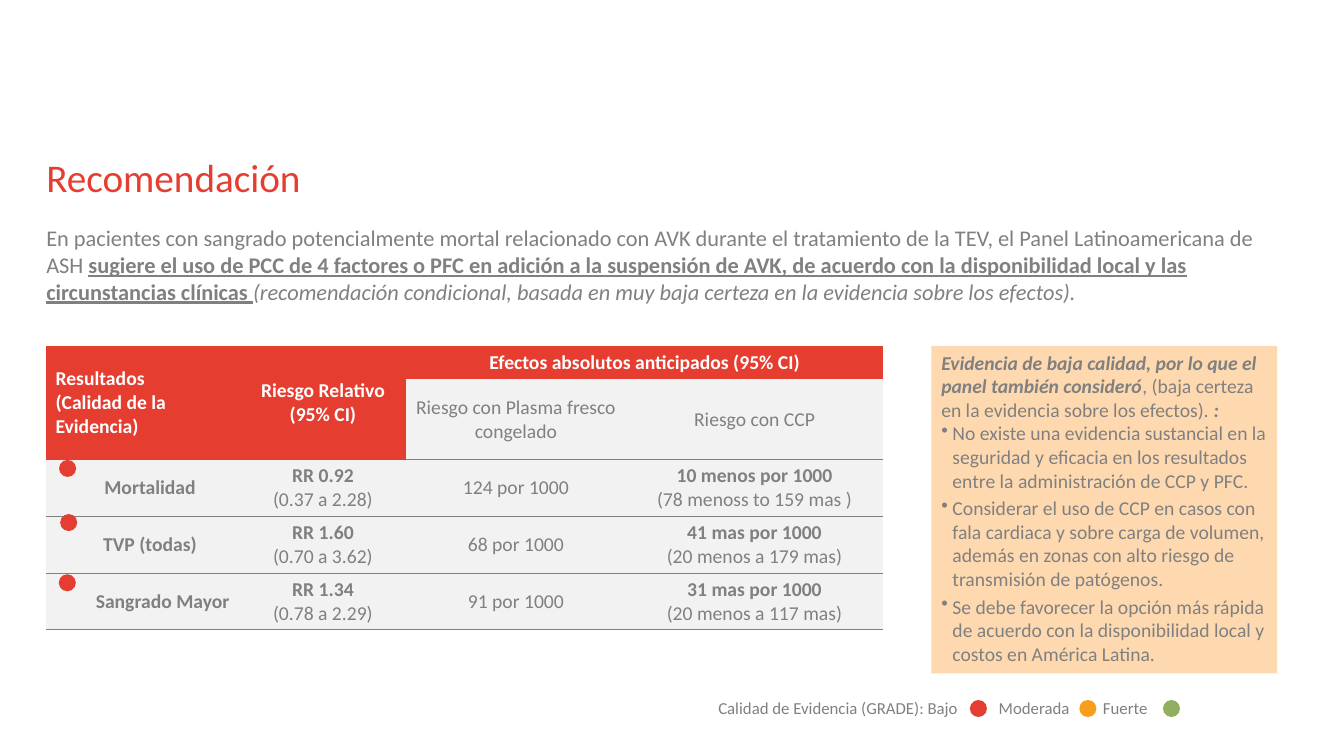
from lxml import etree
from pptx import Presentation
from pptx.dml.color import RGBColor
from pptx.enum.shapes import MSO_SHAPE
from pptx.enum.text import MSO_ANCHOR, PP_ALIGN
from pptx.oxml import parse_xml
from pptx.oxml.ns import nsdecls, qn
from pptx.util import Pt

LEFT, CENTER = PP_ALIGN.LEFT, PP_ALIGN.CENTER
TOP, MIDDLE = MSO_ANCHOR.TOP, MSO_ANCHOR.MIDDLE
OVAL, RECTANGLE = MSO_SHAPE.OVAL, MSO_SHAPE.RECTANGLE
color = RGBColor.from_string

FONT = "Calibri"
RED, DOT_RED, ORANGE, GREEN = "E53E31", "E43E32", "F99D1C", "91AF5F"
GRAY, PALE, PEACH, WHITE = "808080", "F2F2F2", "FED9B0", "FFFFFF"
NO_GRID_STYLE = "{2D5ABB26-0587-4C30-8999-92F81FD0307C}"
MARGIN_LEFT = 33.1
TABLE_TOP = 247


def write(paragraph, pieces, size, hex_color=GRAY):
    """Fill a paragraph with (text, style) runs; style holds any of b, i, u."""
    paragraph.font.name = FONT
    paragraph.font.size = Pt(size)
    paragraph.font.color.rgb = color(hex_color)
    for text, style in pieces:
        run = paragraph.add_run()
        run.text = text
        run.font.bold = "b" in style
        run.font.italic = "i" in style
        run.font.underline = "u" in style


def add_dot(shapes, left, top, hex_color):
    dot = shapes.add_shape(OVAL, Pt(left), Pt(top), Pt(12.2), Pt(12.2))
    dot.shadow.inherit = False
    dot.fill.solid()
    dot.fill.fore_color.rgb = color(hex_color)
    dot.line.fill.background()


presentation = Presentation()
presentation.slide_width, presentation.slide_height = Pt(960), Pt(540)
slide = presentation.slides.add_slide(presentation.slide_layouts[5])

# Title
title = slide.shapes.title
title.left, title.top, title.width, title.height = Pt(MARGIN_LEFT), Pt(106), Pt(864), Pt(56)
title.text_frame.margin_left = title.text_frame.margin_right = 0
title.text_frame.vertical_anchor = TOP
title.text_frame.paragraphs[0].alignment = LEFT
write(title.text_frame.paragraphs[0], [("Recomendación", "")], 28, RED)

# Recommendation
body = slide.shapes.add_textbox(Pt(MARGIN_LEFT), Pt(160), Pt(864), Pt(87)).text_frame
body.word_wrap = True
body.margin_left = body.margin_right = body.margin_top = body.margin_bottom = 0
write(body.paragraphs[0], [
    ("En pacientes con sangrado potencialmente mortal relacionado con AVK durante el "
     "tratamiento de la TEV, el Panel Latinoamericana de ASH ", ""),
    ("sugiere el uso de PCC de 4 factores o PFC en adición a la suspensión de AVK, de acuerdo "
     "con la disponibilidad local y las circunstancias clínicas ", "bu"),
    ("(recomendación condicional, basada en muy baja certeza en la evidencia sobre los "
     "efectos).", "i"),
], 16)

# Results table: each cell is a list of (line, style)
rows = [
    [[("Resultados", "b"), ("(Calidad de la Evidencia)", "b")],
     [("Riesgo Relativo", "b"), ("(95% CI)", "b")],
     [("Efectos absolutos anticipados (95% CI)", "b")], []],
    [[], [], [("Riesgo con Plasma fresco congelado", "")], [("Riesgo con CCP", "")]],
    [[("Mortalidad", "b")], [("RR 0.92", "b"), ("(0.37 a 2.28)", "")],
     [("124 por 1000", "")], [("10 menos por 1000", "b"), ("(78 menoss to 159 mas )", "")]],
    [[("TVP (todas)", "b")], [("RR 1.60", "b"), ("(0.70 a 3.62)", "")],
     [("68 por 1000", "")], [("41 mas por 1000", "b"), ("(20 menos a 179 mas)", "")]],
    [[("Sangrado Mayor", "b")], [("RR 1.34", "b"), ("(0.78 a 2.29)", "")],
     [("91 por 1000", "")], [("31 mas por 1000", "b"), ("(20 menos a 117 mas)", "")]],
]
column_widths = [138.2, 118.8, 156.9, 184]
row_heights = [23.6, 57.9, 40.2, 41, 40.2]
label_indents = {2: 10, 3: 10, 4: 28}

frame = slide.shapes.add_table(5, 4, Pt(MARGIN_LEFT), Pt(TABLE_TOP),
                               Pt(sum(column_widths)), Pt(sum(row_heights)))
table = frame.table
table.first_row = table.horz_banding = False
table._tbl.tblPr.find(qn("a:tableStyleId")).text = NO_GRID_STYLE
for column, width in zip(table.columns, column_widths):
    column.width = Pt(width)
for row, height in zip(table.rows, row_heights):
    row.height = Pt(height)
table.cell(0, 0).merge(table.cell(1, 0))
table.cell(0, 1).merge(table.cell(1, 1))
table.cell(0, 2).merge(table.cell(0, 3))

for r, row in enumerate(rows):
    for c, lines in enumerate(row):
        cell = table.cell(r, c)
        is_header = r == 0 or (r == 1 and c < 2)
        cell.fill.solid()
        cell.fill.fore_color.rgb = color(RED if is_header else PALE)
        cell.vertical_anchor = MIDDLE
        cell.margin_left = cell.margin_right = Pt(6.6)
        cell.margin_top = cell.margin_bottom = Pt(2.8)
        if c == 0 and r in label_indents:
            cell.margin_left, cell.margin_right = Pt(label_indents[r]), 0
        for index, line in enumerate(lines):
            text_frame = cell.text_frame
            paragraph = text_frame.add_paragraph() if index else text_frame.paragraphs[0]
            paragraph.alignment = LEFT if r == c == 0 else CENTER
            write(paragraph, [line], 14, WHITE if is_header else GRAY)
        if not is_header:
            cell._tc.get_or_add_tcPr().insert(0, parse_xml(
                f'<a:lnB {nsdecls("a")} w="12700"><a:solidFill><a:srgbClr val="{GRAY}"/>'
                '</a:solidFill></a:lnB>'))

# Panel considerations
panel = slide.shapes.add_shape(RECTANGLE, Pt(665.3), Pt(TABLE_TOP), Pt(247), Pt(234))
panel.shadow.inherit = False
panel.fill.solid()
panel.fill.fore_color.rgb = color(PEACH)
panel.line.fill.background()
panel.text_frame.word_wrap = True
panel.text_frame.vertical_anchor = TOP
intro = panel.text_frame.paragraphs[0]
intro.alignment = LEFT
write(intro, [
    ("Evidencia de baja calidad, por lo que el panel también consideró", "bi"),
    (", (baja certeza en la evidencia sobre los efectos). ", ""),
    (":", "bi"),
], 14)
considerations = [
    "No existe una evidencia sustancial en la seguridad y eficacia en los resultados entre la "
    "administración de CCP y PFC.",
    "Considerar el uso de CCP en casos con fala cardiaca y sobre carga de volumen, además en "
    "zonas con alto riesgo de transmisión de patógenos.",
    "Se debe favorecer la opción más rápida de acuerdo con la disponibilidad local y costos en "
    "América Latina.",
]
for consideration in considerations:
    paragraph = panel.text_frame.add_paragraph()
    paragraph.alignment = LEFT
    paragraph.space_after = Pt(3)
    properties = paragraph._p.get_or_add_pPr()
    properties.set("marL", str(Pt(8)))
    properties.set("indent", str(-Pt(8)))
    etree.SubElement(properties, qn("a:buChar"), char="•")
    write(paragraph, [(consideration, "")], 14)

# Evidence quality legend
legend = slide.shapes.add_group_shape().shapes
key = legend.add_textbox(Pt(506), Pt(494.6), Pt(343), Pt(21.8)).text_frame
key.word_wrap = True
properties = key.paragraphs[0]._p.get_or_add_pPr()
tab_list = etree.SubElement(properties, qn("a:tabLst"))
for position in (200.3, 274.8):
    etree.SubElement(tab_list, qn("a:tab"), pos=str(Pt(position)), algn="l")
write(key.paragraphs[0], [("Calidad de Evidencia (GRADE): Bajo\tModerada\tFuerte", "")], 12)
for left, hex_color in ((692.8, DOT_RED), (771, ORANGE), (830.7, GREEN)):
    add_dot(legend, left, 500, hex_color)

# Evidence quality of each result
for left, top in ((42.2, 328.5), (43, 367.2), (42, 410.2)):
    add_dot(slide.shapes, left, top, DOT_RED)

presentation.save("out.pptx")
